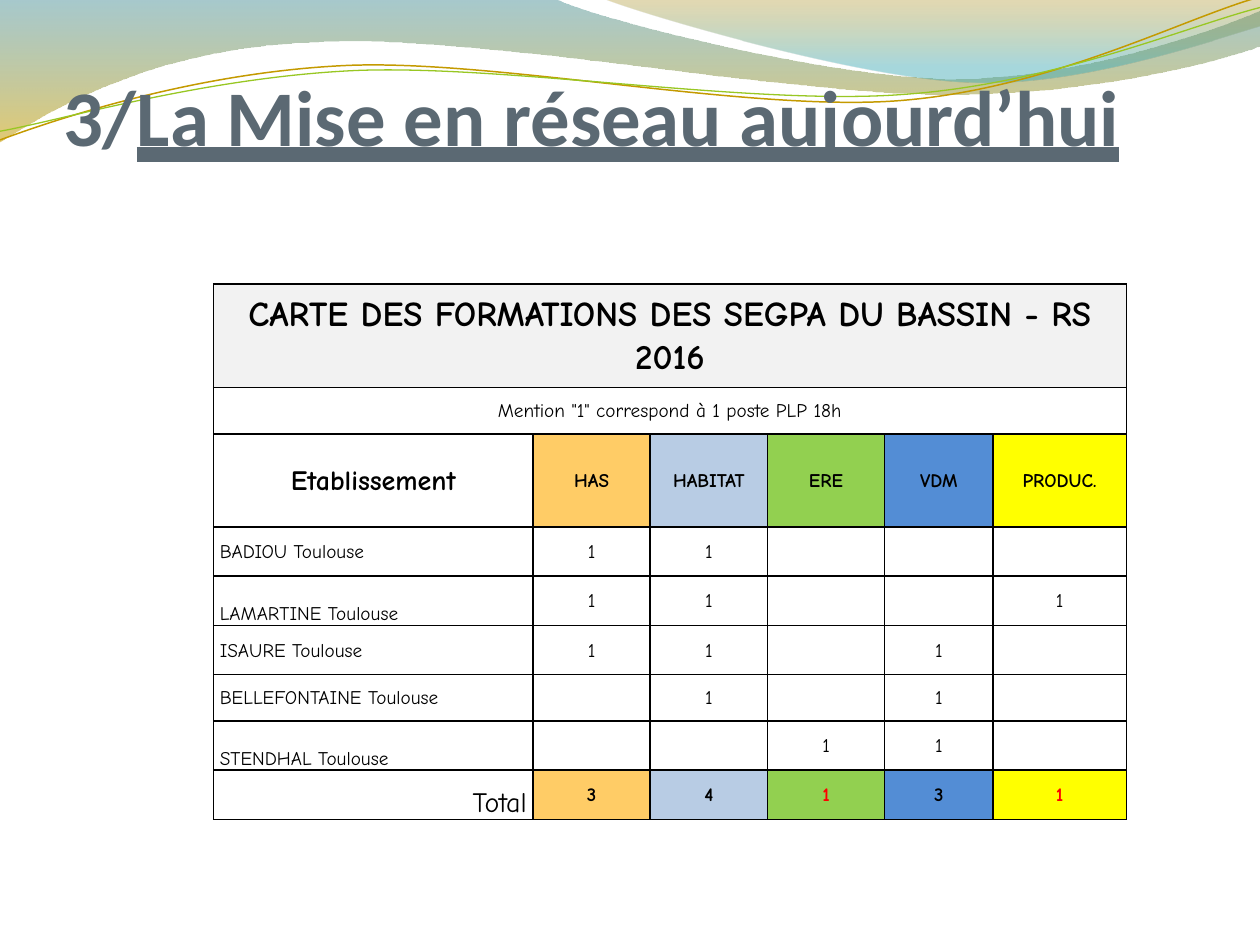
from math import cos, radians, sin

from lxml import etree
from pptx import Presentation
from pptx.dml.color import RGBColor
from pptx.enum.text import MSO_ANCHOR, MSO_AUTO_SIZE, MSO_UNDERLINE, PP_ALIGN
from pptx.oxml.ns import qn
from pptx.util import Pt

LEFT, CENTER, RIGHT = PP_ALIGN.LEFT, PP_ALIGN.CENTER, PP_ALIGN.RIGHT
MIDDLE, BOTTOM = MSO_ANCHOR.MIDDLE, MSO_ANCHOR.BOTTOM
NO_AUTOFIT = MSO_AUTO_SIZE.NONE
HEAVY = MSO_UNDERLINE.HEAVY_LINE
TITLE_ONLY = 5

GOLD_WAVE = [
    [(0, 0)], [(317, -0.7)],
    [(343, 12), (478, 45), (546, 45)], [(614, 45), (690, 19), (720, 6)],
    [(720.7, 26)],
    [(708, 32), (626, 55), (537, 54)], [(448, 54), (275, 20), (185, 24)],
    [(93, 26), (33, 60), (-0.7, 81.4)],
]
TEAL_WAVE = [
    [(345, -0.7)],
    [(366, 8), (491, 45), (554, 47)], [(616, 50), (692, 23), (720, 15)],
    [(720, 0)],
]
GOLD_LINE = [
    [(0, 80)],
    [(35, 67), (114, 41), (199, 37.4)], [(284, 34), (427, 64), (513, 57.6)],
    [(600, 51), (675, 11), (718.6, -1.4)],
]
GREEN_LINE = [
    [(0, 75)],
    [(34, 69), (118, 44), (204, 40.3)], [(290, 37), (430, 60.5), (516, 54)],
    [(602, 48), (678, 15), (720, 4.3)],
]
LINE_ROTATION = 357.3

COLUMN_WIDTHS = [182.6, 67, 67, 67, 61.9, 76.3]
ROW_HEIGHTS = [59, 26.6, 53.3, 28.1, 28.1, 28.1, 26.6, 28.1, 28.1]
COURSES = ["HAS", "HABITAT", "ERE", "VDM", "PRODUC."]
COURSE_FILLS = ["FFCC66", "B8CCE4", "92D050", "538DD5", "FFFF00"]
SCHOOLS = [
    ("BADIOU Toulouse", MIDDLE, "FFFFFF", ["1", "1", "", "", ""]),
    ("LAMARTINE Toulouse", BOTTOM, "FFFFFF", ["1", "1", "", "", "1"]),
    ("ISAURE Toulouse", MIDDLE, "FFFFFF", ["1", "1", "", "1", ""]),
    ("BELLEFONTAINE Toulouse", MIDDLE, "FFFFFF", ["", "1", "", "1", ""]),
    ("STENDHAL Toulouse", BOTTOM, None, ["", "", "1", "1", ""]),
]
TOTALS = ["3", "4", "1", "3", "1"]


def color(value):
    return RGBColor.from_string(value)


def set_attributes(target, values):
    for name, value in values.items():
        setattr(target, name, value)


def rotate(segments, degrees, center):
    cosine, sine = cos(radians(degrees)), sin(radians(degrees))
    center_x, center_y = center
    return [
        [(center_x + (x - center_x) * cosine - (y - center_y) * sine,
          center_y + (x - center_x) * sine + (y - center_y) * cosine) for x, y in segment]
        for segment in segments
    ]


class SlideBuilder:
    title_font = {"name": "Calibri", "size": Pt(45), "bold": True}
    table_font = "Comic Neue"
    title_color = "5B6973"
    border_color = "000000"

    def __init__(self, slide):
        self.slide = slide

    def freeform(self, segments, close):
        ends = [(Pt(x), Pt(y)) for x, y in (segment[-1] for segment in segments)]
        builder = self.slide.shapes.build_freeform(*ends[0], scale=1.0)
        builder.add_line_segments(ends[1:], close=close)
        shape = builder.convert_to_shape()
        shape.shadow.inherit = False
        outline = next(shape.element.iter(qn("a:path")))
        for straight, segment in zip(outline.findall(qn("a:lnTo")), segments[1:]):
            if len(segment) == 3:
                bend = etree.Element(qn("a:cubicBezTo"))
                for x, y in segment:
                    etree.SubElement(bend, qn("a:pt"), x=str(Pt(x) - shape.left),
                                     y=str(Pt(y) - shape.top))
                outline.replace(straight, bend)
        return shape

    def wave(self, segments, stops):
        shape = self.freeform(segments, True)
        shape.line.fill.background()
        shape.fill.gradient()
        shape.fill.gradient_angle = 270
        for stop, (position, value, opacity) in zip(shape.fill.gradient_stops, stops):
            stop.position = position
            stop.color.rgb = color(value)
        markers = shape.element.iter(qn("a:gs"))
        for marker, (position, value, opacity) in zip(markers, stops):
            etree.SubElement(marker[0], qn("a:alpha"), val=str(opacity * 1000))

    def curve(self, segments, center, value, width):
        shape = self.freeform(rotate(segments, -LINE_ROTATION, center), False)
        shape.rotation = LINE_ROTATION
        shape.fill.background()
        shape.line.color.rgb = color(value)
        shape.line.width = Pt(width)

    def title(self, prefix, text):
        shape = self.slide.shapes.title
        shape.element.getparent().append(shape.element)
        set_attributes(shape, {"left": Pt(36), "top": Pt(55.4), "width": Pt(648), "height": Pt(90)})
        set_attributes(shape.text_frame, {
            "auto_size": NO_AUTOFIT, "word_wrap": True, "vertical_anchor": BOTTOM,
            "margin_left": 0, "margin_right": 0, "margin_top": Pt(3.6), "margin_bottom": 0,
        })
        paragraph = shape.text_frame.paragraphs[0]
        paragraph.alignment = LEFT
        for words, underline in ((prefix, False), (text, HEAVY)):
            run = paragraph.add_run()
            run.text = words
            set_attributes(run.font, {**self.title_font, "underline": underline})
            run.font.color.rgb = color(self.title_color)
        paragraph.add_line_break()

    def table(self, left, top, widths, heights):
        frame = self.slide.shapes.add_table(
            len(heights), len(widths), Pt(left), Pt(top), Pt(sum(widths)), Pt(sum(heights)))
        table = frame.table
        set_attributes(table, {"first_row": False, "horz_banding": False})
        for column, width in zip(table.columns, widths):
            column.width = Pt(width)
        for row, height in zip(table.rows, heights):
            row.height = Pt(height)
        for cell in table.iter_cells():
            self.borders(cell)
        return table

    def borders(self, cell):
        properties = cell._tc.get_or_add_tcPr()
        for side in ("L", "R", "T", "B"):
            line = etree.SubElement(properties, qn(f"a:ln{side}"), w=str(Pt(1)))
            fill = etree.SubElement(line, qn("a:solidFill"))
            etree.SubElement(fill, qn("a:srgbClr"), val=self.border_color)

    def cell(self, cell, text, size=11, bold=False, fill=None,
             align=CENTER, anchor=MIDDLE, ink="000000"):
        set_attributes(cell, {
            "margin_left": Pt(3.6), "margin_right": Pt(3.6),
            "margin_top": 0, "margin_bottom": 0, "vertical_anchor": anchor,
        })
        if fill:
            cell.fill.solid()
            cell.fill.fore_color.rgb = color(fill)
        else:
            cell.fill.background()
        if text:
            paragraph = cell.text_frame.paragraphs[0]
            set_attributes(paragraph, {"alignment": align, "line_spacing": 1.07})
            run = paragraph.add_run()
            run.text = text
            set_attributes(run.font, {"name": self.table_font, "size": Pt(size), "bold": bold})
            run.font.color.rgb = color(ink)


def main():
    presentation = Presentation()
    set_attributes(presentation, {"slide_width": Pt(720), "slide_height": Pt(540)})
    slide = presentation.slides.add_slide(presentation.slide_layouts[TITLE_ONLY])
    builder = SlideBuilder(slide)

    builder.wave(GOLD_WAVE, [(0, "3B8890", 45), (1, "C99E00", 55)])
    builder.wave(TEAL_WAVE, [(0, "A48100", 30), (0.8, "3EA9B4", 45)])
    builder.curve(GOLD_LINE, (359.3, 41.4), "C49A00", 0.85)
    builder.curve(GREEN_LINE, (359.6, 42.5), "98C723", 0.75)
    builder.title("3/", "La Mise en réseau aujourd’hui")

    table = builder.table(122, 162.3, COLUMN_WIDTHS, ROW_HEIGHTS)
    last_column, last_row = len(COLUMN_WIDTHS) - 1, len(ROW_HEIGHTS) - 1
    for row in (0, 1):
        table.cell(row, 0).merge(table.cell(row, last_column))
    builder.cell(table.cell(0, 0), "CARTE DES FORMATIONS DES SEGPA DU BASSIN - RS 2016",
                 size=20, bold=True, fill="F2F2F2")
    builder.cell(table.cell(1, 0), 'Mention "1" correspond à 1 poste PLP 18h')
    builder.cell(table.cell(2, 0), "Etablissement", size=16, bold=True)
    builder.cell(table.cell(last_row, 0), "Total", size=16, align=RIGHT, anchor=BOTTOM)
    for column, (course, fill, total) in enumerate(zip(COURSES, COURSE_FILLS, TOTALS), 1):
        builder.cell(table.cell(2, column), course, bold=True, fill=fill)
        builder.cell(table.cell(last_row, column), total, bold=True, fill=fill,
                     ink="FF0000" if total == "1" else "000000")
    for row, (school, anchor, fill, posts) in enumerate(SCHOOLS, 3):
        builder.cell(table.cell(row, 0), school, fill=fill, align=LEFT, anchor=anchor)
        for column, post in enumerate(posts, 1):
            builder.cell(table.cell(row, column), post, fill="FFFFFF")

    presentation.save("out.pptx")


if __name__ == "__main__":
    main()
